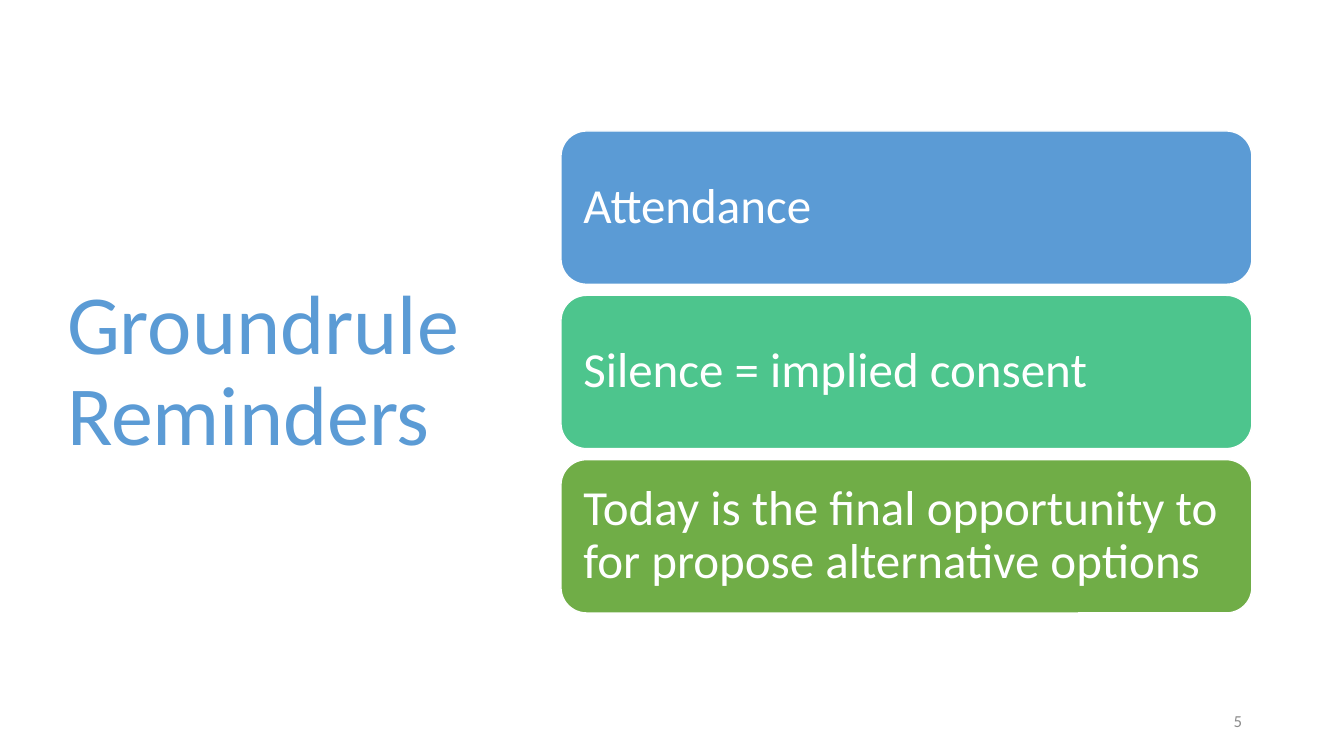
from pptx import Presentation
from pptx.dml.color import RGBColor
from pptx.enum.shapes import MSO_SHAPE
from pptx.enum.text import MSO_ANCHOR, PP_ALIGN
from pptx.util import Pt

EMU_PER_PX = 914400 / 100.8
ROUNDED = MSO_SHAPE.ROUNDED_RECTANGLE
MIDDLE = MSO_ANCHOR.MIDDLE
LEFT, RIGHT = PP_ALIGN.LEFT, PP_ALIGN.RIGHT
FONT = "Calibri"
BLUE, TEAL, GREEN = "5B9BD5", "4DC58D", "70AD47"
WHITE, GRAY = "FFFFFF", "8C8C8C"
REMINDERS = [
    ("Attendance", BLUE),
    ("Silence = implied consent", TEAL),
    ("Today is the final opportunity to for propose alternative options", GREEN),
]


def px(length):
    return round(length * EMU_PER_PX)


def color(hex_code):
    return RGBColor.from_string(hex_code)


def write(shape, text, size, hex_code, align=LEFT, spacing=0.9, inset=None):
    frame = shape.text_frame
    frame.word_wrap = True
    frame.vertical_anchor = MIDDLE
    if inset is not None:
        frame.margin_left = frame.margin_right = px(inset)
        frame.margin_top = frame.margin_bottom = px(inset)
    paragraph = frame.paragraphs[0]
    paragraph.alignment = align
    paragraph.line_spacing = spacing
    run = paragraph.add_run()
    run.text = text
    run.font.name = FONT
    run.font.size = Pt(size)
    run.font.color.rgb = color(hex_code)


def place_title(slide, left, top, width, height):
    title = slide.shapes.title
    title.left, title.top = px(left), px(top)
    title.width, title.height = px(width), px(height)
    write(title, "Groundrule Reminders", 60, BLUE)


def add_reminders(slide, left, top, width, height, gap=11):
    card_height = (height - gap * (len(REMINDERS) - 1)) / len(REMINDERS)
    for index, (reminder, fill) in enumerate(REMINDERS):
        card_top = top + index * (card_height + gap)
        card = slide.shapes.add_shape(
            ROUNDED, px(left), px(card_top), px(width), px(card_height))
        card.shadow.inherit = False
        card.fill.solid()
        card.fill.fore_color.rgb = color(fill)
        card.line.color.rgb = color(WHITE)
        card.line.width = Pt(1)
        write(card, reminder, 35, WHITE, inset=15)


def add_page_number(slide, left, top, width, height):
    page_number = slide.shapes.add_textbox(
        px(left), px(top), px(width), px(height))
    write(page_number, "5", 12, GRAY, align=RIGHT, spacing=1.0)


def main():
    deck = Presentation()
    deck.slide_width, deck.slide_height = px(1344), px(756)
    slide = deck.slides.add_slide(deck.slide_layouts[5])
    place_title(slide, 57, 69, 419, 607)
    add_page_number(slide, 950, 701, 302, 40)
    add_reminders(slide, 561, 131, 691, 482)
    deck.save("out.pptx")


if __name__ == "__main__":
    main()
